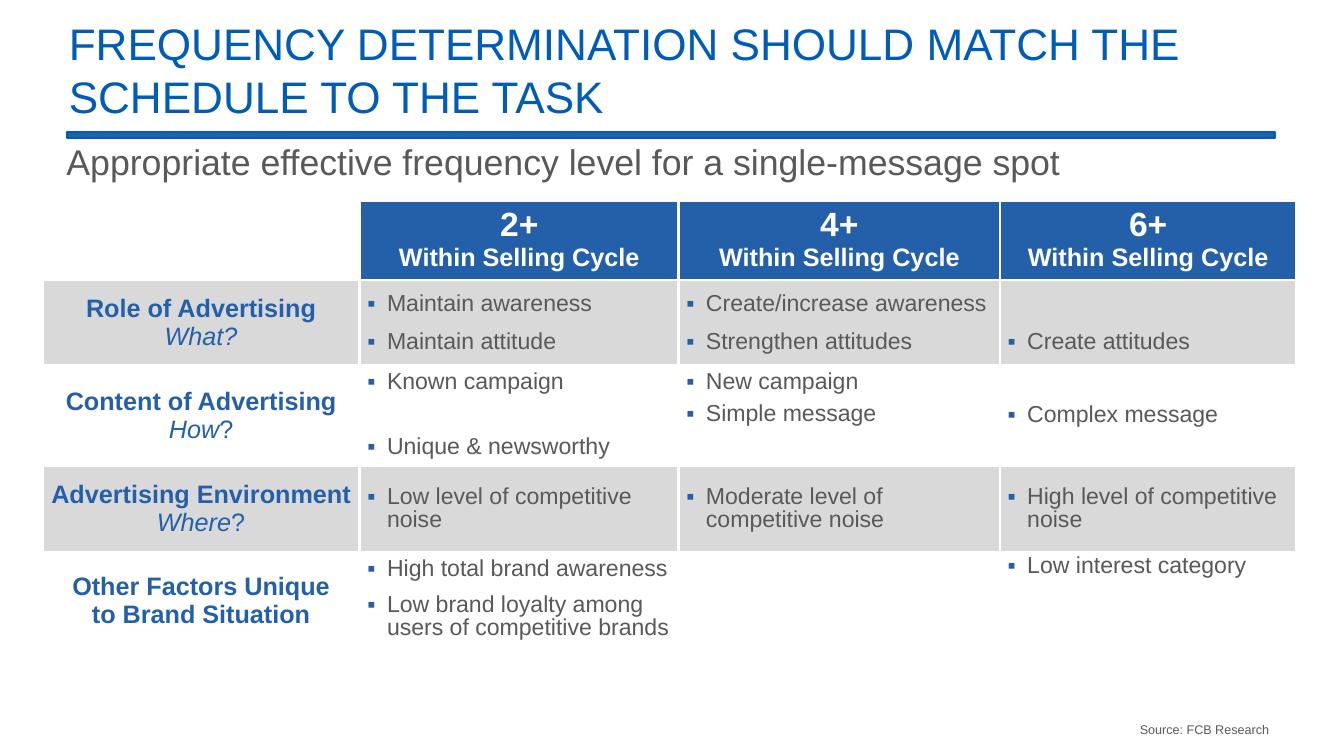
import lxml.etree
import pptx
import pptx.dml.color
import pptx.enum.shapes
import pptx.enum.text
import pptx.oxml.ns
import pptx.util

WIDTH, HEIGHT = 17.78, 10
FONT = "Arial"
BRIGHT_BLUE, BLUE, GREY, BAND, WHITE = "005CB9", "2460AA", "595959", "D9D9D9", "FFFFFF"

TITLE = "FREQUENCY DETERMINATION SHOULD MATCH THE SCHEDULE TO THE TASK"
SUBTITLE = "Appropriate effective frequency level for a single-message spot"
SOURCE = "Source: FCB Research"

LEVELS = ["2+", "4+", "6+"]
LEVEL_NOTE = "Within Selling Cycle"
COLUMN_WIDTHS = [4.2, 4.22, 4.25, 3.92]
HEADER_HEIGHT = 0.96

ROWS = [
    {"label": ["Role of Advertising"], "question": ("What?", ""), "height": 1.12,
     "banded": True, "middle": True, "gap": 12,
     "cells": [["Maintain awareness", "Maintain attitude"],
               ["Create/increase awareness", "Strengthen attitudes"],
               ["", "Create attitudes"]]},
    {"label": ["Content of Advertising"], "question": ("How", "?"), "height": 1.27, "gap": 6,
     "cells": [["Known campaign", "", "Unique & newsworthy"],
               ["New campaign", "Simple message"],
               ["", "Complex message"]]},
    {"label": ["Advertising Environment"], "question": ("Where", "?"), "height": 1.12,
     "banded": True, "middle": True, "spacing": 0.9,
     "cells": [["Low level of competitive noise"],
               ["Moderate level of competitive noise"],
               ["High level of competitive noise"]]},
    {"label": ["Other Factors Unique", "to Brand Situation"], "height": 1.2,
     "gap": 12, "spacing": 0.9,
     "cells": [["High total brand awareness",
                "Low brand loyalty among users of competitive brands"],
               [],
               ["Low interest category"]]},
]

BODY_SIZE, LABEL_SIZE = 22, 24
BODY_LINE = BODY_SIZE * 1.15
CELL_MARGIN = 0.05
BULLET_INDENT = 0.26

inches, points = pptx.util.Inches, pptx.util.Pt
align, anchor = pptx.enum.text.PP_ALIGN, pptx.enum.text.MSO_ANCHOR


def color(value):
    return pptx.dml.color.RGBColor.from_string(value)


def format_run(run, size, value, bold=False, italic=False):
    run.font.name = FONT
    run.font.size = points(size)
    run.font.color.rgb = color(value)
    run.font.bold = bold
    run.font.italic = italic


def add_line(frame, position, parts, alignment=None):
    paragraph = frame.paragraphs[0] if position == 0 else frame.add_paragraph()
    paragraph.alignment = alignment
    for text, *style in parts:
        if text:
            run = paragraph.add_run()
            run.text = text
            format_run(run, *style)
    return paragraph


def add_text(slide, box, text, size, value, vertical, margins=(0, 0), alignment=None):
    shape = slide.shapes.add_textbox(*map(inches, box))
    frame = shape.text_frame
    frame.word_wrap = True
    frame.vertical_anchor = vertical
    frame.margin_left = frame.margin_right = inches(margins[0])
    frame.margin_top = frame.margin_bottom = inches(margins[1])
    add_line(frame, 0, [(text, size, value)], alignment)


def add_xml(parent, tag, **attributes):
    return lxml.etree.SubElement(parent, pptx.oxml.ns.qn(tag), **attributes)


def add_bullet(paragraph):
    properties = paragraph._p.get_or_add_pPr()
    properties.set("marL", str(inches(BULLET_INDENT)))
    properties.set("indent", str(-inches(BULLET_INDENT)))
    add_xml(add_xml(properties, "a:buClr"), "a:srgbClr", val=BLUE)
    add_xml(properties, "a:buFont", typeface=FONT)
    add_xml(properties, "a:buChar", char="▪")


def style_cell(cell, fill, header):
    properties = cell._tc.get_or_add_tcPr()
    widths = {"a:lnL": 3, "a:lnR": 3, "a:lnT": 1, "a:lnB": 3 if header else 1}
    for tag, width in widths.items():
        border = add_xml(properties, tag, w=str(points(width)))
        add_xml(add_xml(border, "a:solidFill"), "a:srgbClr", val=WHITE)
    if fill:
        cell.fill.solid()
        cell.fill.fore_color.rgb = color(fill)
    else:
        cell.fill.background()


def fill_bullets(cell, items, row):
    gap = row.get("gap", 0)
    position = skipped = 0
    for item in items:
        if not item:
            skipped += BODY_LINE + gap
            continue
        paragraph = add_line(cell.text_frame, position, [(item, BODY_SIZE, GREY)])
        if position:
            paragraph.space_before = points(gap + skipped)
        elif skipped:
            cell.margin_top = inches(CELL_MARGIN) + points(skipped)
        if len(items) == position + 1 and "spacing" in row:
            paragraph.line_spacing = row["spacing"]
        add_bullet(paragraph)
        position += 1
        skipped = 0


def add_frequency_table(slide):
    heights = [HEADER_HEIGHT] + [row["height"] for row in ROWS]
    frame = slide.shapes.add_table(
        len(heights), len(COLUMN_WIDTHS), inches(0.56), inches(2.67),
        inches(sum(COLUMN_WIDTHS)), inches(sum(heights)))
    table = frame.table
    table.first_row = table.horz_banding = False
    for column, width in zip(table.columns, COLUMN_WIDTHS):
        column.width = inches(width)
    for table_row, height in zip(table.rows, heights):
        table_row.height = inches(height)

    style_cell(table.cell(0, 0), None, True)
    for column, level in enumerate(LEVELS, 1):
        cell = table.cell(0, column)
        style_cell(cell, BLUE, True)
        for position, (text, size) in enumerate([(level, 32), (LEVEL_NOTE, LABEL_SIZE)]):
            add_line(cell.text_frame, position, [(text, size, WHITE, True)], align.CENTER)

    for index, row in enumerate(ROWS, 1):
        for column in range(len(COLUMN_WIDTHS)):
            cell = table.cell(index, column)
            style_cell(cell, BAND if row.get("banded") else None, False)
            if column == 0 or row.get("middle"):
                cell.vertical_anchor = anchor.MIDDLE
            if column:
                fill_bullets(cell, row["cells"][column - 1], row)
        lines = [[(text, LABEL_SIZE, BLUE, True)] for text in row["label"]]
        if "question" in row:
            word, mark = row["question"]
            lines.append([(word, LABEL_SIZE, BLUE, False, True), (mark, LABEL_SIZE, BLUE)])
        for position, parts in enumerate(lines):
            add_line(table.cell(index, 0).text_frame, position, parts, align.CENTER)


def main():
    presentation = pptx.Presentation()
    presentation.slide_width, presentation.slide_height = inches(WIDTH), inches(HEIGHT)
    slide = presentation.slides.add_slide(presentation.slide_layouts[6])

    rule = slide.shapes.add_shape(
        pptx.enum.shapes.MSO_SHAPE.RECTANGLE, *map(inches, (0.89, 1.75, 15.98, 0.08)))
    rule.shadow.inherit = False
    rule.fill.solid()
    rule.fill.fore_color.rgb = color(BLUE)
    rule.line.color.rgb = color(BRIGHT_BLUE)
    rule.line.width = points(2)

    add_text(slide, (0.75, 0.28, 16.91, 1.28), TITLE, 42, BRIGHT_BLUE,
             anchor.MIDDLE, (0.16, 0.08))
    add_text(slide, (0.88, 1.96, 16, 0.46), SUBTITLE, 34, GREY, anchor.BOTTOM)
    add_frequency_table(slide)
    add_text(slide, (14.52, 9.5, 2.37, 0.3), SOURCE, 12, GREY,
             anchor.TOP, (0.1, 0.05), align.RIGHT)
    presentation.save("out.pptx")


if __name__ == "__main__":
    main()
